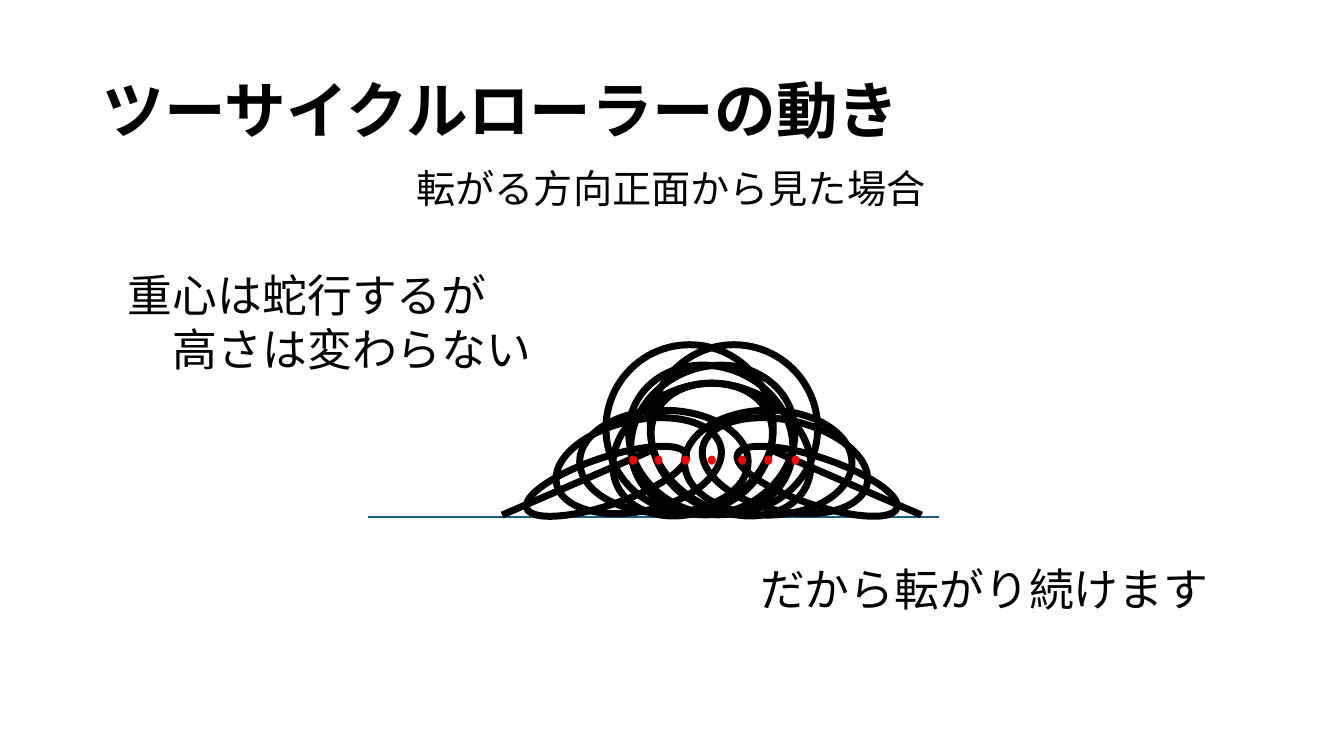
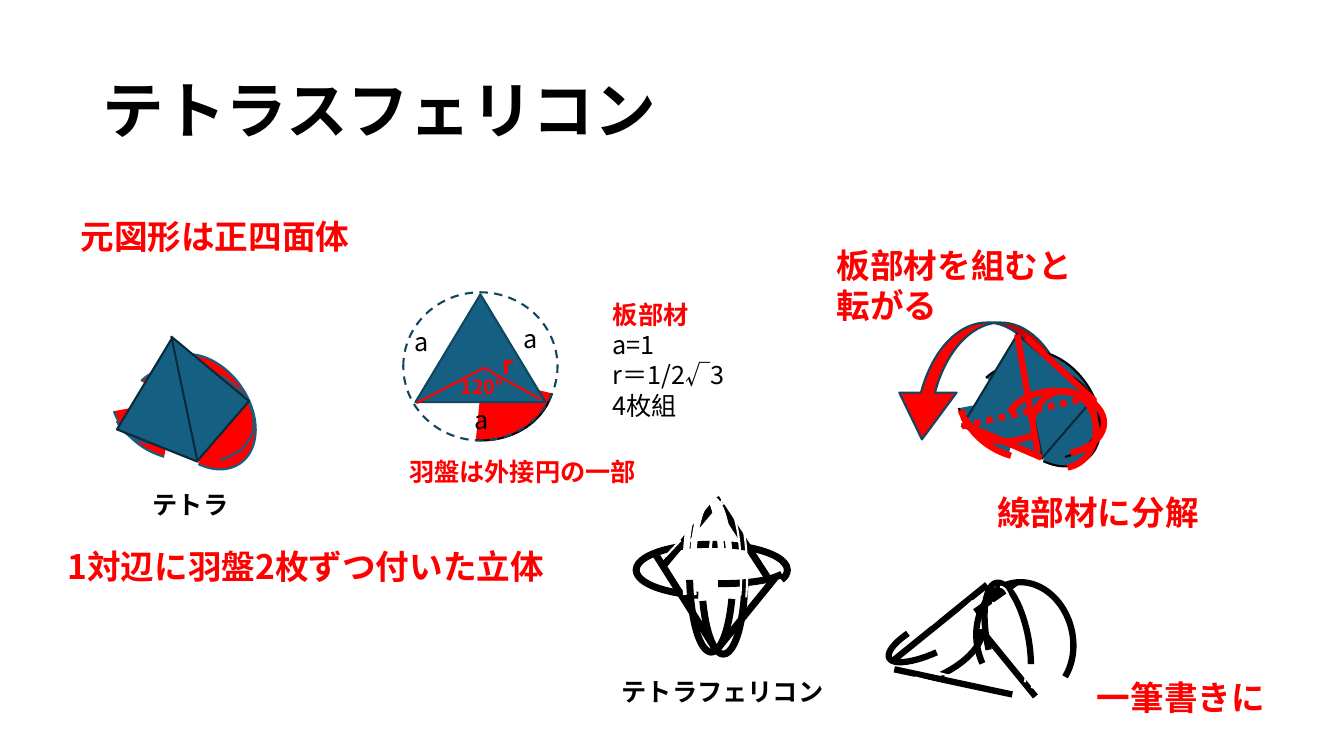
from lxml.etree import SubElement
from pptx import Presentation
from pptx.dml.color import RGBColor
from pptx.enum.dml import MSO_LINE
from pptx.enum.shapes import MSO_CONNECTOR, MSO_SHAPE
from pptx.enum.text import MSO_ANCHOR, PP_ALIGN
from pptx.oxml.ns import qn
from pptx.util import Cm, Pt

FONT = "Noto Sans CJK JP"
BLACK, WHITE, RED = "000000", "FFFFFF", "FF0000"
BLUE, NAVY, DARK = "156082", "104760", "092A39"

# Slide 1 content; positions are in inches: x, y, w, h, rotation
ROLL_TITLE = "ツーサイクルローラーの動き"
ROLL_TEXTS = [  # at, lines, size, centred
    ((1.17, 2.61, 4.95, 1.18), ["重心は蛇行するが", "高さは変わらない"], 32, False),
    ((7.44, 5.52, 4.95, 0.64), ["だから転がり続けます"], 32, False),
    ((4, 1.58, 5.31, 0.57), ["転がる方向正面から見た場合"], 28, True),
]
AXIS = 7.06
GROUND = (3.65, 5.13, 9.31, 5.13)
SPOKE = (4.98, 5.11, 6.48, 4.46)
RINGS = [  # each is drawn again mirrored about AXIS
    (6.01, 3.42, 1.66, 1.66, 0),
    (5.18, 4.54, 1.67, 0.47, -18.6),
    (6.22, 3.64, 1.66, 1.45, 23.3),
    (5.5, 4.17, 1.67, 0.9, -12.8),
    (6.42, 3.85, 1.66, 1.22, 26.1),
]
MIDDLE = [(6.79, 4.07, 1.66, 1.04), (5.75, 4.07, 1.67, 1.02)]
CENTRES = [6.24, 6.49, 6.76, 7.02, 7.32, 7.58, 7.85]

# Slide 2 content
TETRA_TITLE = "テトラスフェリコン"
TETRA_TEXTS = [  # at, lines, size, colour, bold, centred
    ((0.57, 4.81, 2.64, 0.4), ["テトラ"], 18, BLACK, True, True),
    ((5.57, 6.66, 3.19, 0.4), ["テトラフェリコン"], 18, BLACK, True, True),
    ((0.7, 2.09, 4.19, 0.5), ["元図形は正四面体"], 24, RED, True, False),
    ((4.01, 3.19, 0.67, 0.4), ["a"], 18, BLACK, False, False),
    ((4.61, 3.96, 0.67, 0.4), ["a"], 18, BLACK, False, False),
    ((5.09, 3.16, 0.67, 0.4), ["a"], 18, BLACK, False, False),
    ((4.89, 3.42, 1.1, 0.4), ["r"], 18, RED, True, False),
    ((4.47, 3.67, 1.1, 0.34), ["120°"], 14, RED, True, False),
    ((0.57, 5.37, 5.19, 0.5), ["1対辺に羽盤2枚ずつ付いた立体"], 24, RED, True, False),
    ((8.2, 2.38, 3.11, 0.91), ["板部材を組むと", "転がる"], 24, RED, True, False),
    ((9.79, 4.83, 2.51, 0.5), ["線部材に分解"], 24, RED, True, False),
    ((3.96, 4.48, 2.64, 0.4), ["羽盤は外接円の一部"], 18, RED, True, False),
    ((10.78, 6.67, 2.18, 0.5), ["一筆書きに"], 24, RED, True, False),
]
PARTS_AT = (5.98, 2.92, 1.83, 1.31)
PARTS = ["板部材", "a=1", "r＝1/2√3", "4枚組"]

# Arcs: x, y, w, h, start, end [, rotation [, flipped]]; lines: x1, y1, x2, y2
SECTOR = (4.06, 3.11, 1.44, 1.26, 13.19, 95.45)
WINGS = [
    (1.4, 3.64, 1.25, 0.89, 177.63, 41.28, 54.9),
    (1.28, 3.65, 1.25, 0.92, 196.72, 41.99, 16.5),
    (1.08, 3.39, 1.34, 1.15, 75.69, 143.05, 26.5),
    (1.08, 3.42, 1.25, 0.92, 106.93, 185.89, 325.6),
]
BODY = [(1.96, 4.57), (2.47, 3.98), (1.7, 3.34), (1.96, 4.58), (1.16, 4.26), (1.71, 3.35)]
SHIFT = (8.38, -0.03)
RADII = [(4.13, 4), (4.8, 3.65), (5.36, 3.96)]
HIDDEN = (9.54, 4.23, 10.78, 3.95)
LAYERS = [  # colour, width, strokes from back to front
    (RED, 4.5, [  # wires of the rolling solid
        (9.99, 3.88, 0.96, 0.63, 192.6, 63.57),
        (10.23, 3.88, 0.64, 0.76, 192.6, 84.24),
        (10.29, 4.48, 10.09, 3.32),
        (9.48, 3.38, 1.34, 1.15, 75.69, 143.05, 26.5),
        (9.61, 4.23, 10.33, 4.54),
        (9.5, 3.4, 1.25, 0.92, 106.93, 185.89, 325.6),
        (10.18, 3.35, 10.86, 3.98)]),
    (BLACK, 5, [  # wire model
        (7.1, 4.94, 7.66, 5.8),
        (6.56, 5.49, 1.24, 0.3, 5.62, 110.81),
        (6.59, 5.6, 7.1, 4.99),
        (6.49, 5.48, 7.09, 6.43),
        (6.96, 4.94, 0.43, 1.55, 50.43, 164.9, 0, True),
        (6.31, 5.4, 1.5, 0.51, 118.02, 8.12),
        (7.69, 5.73, 7.13, 6.42)]),
    (WHITE, 1.5, [  # gaps at its crossings
        (7.03, 4.99, 0.32, 1.44, 162, 51.92),
        (7.04, 4.92, 0.37, 1.56, 162, 51.92),
        (6.75, 5.36, 6.6, 5.52),
        (6.92, 5.52, 6.77, 5.69)]),
    (WHITE, 4.5, [
        (6.87, 4.95, 0.37, 1.46, 162, 51.92, 0, True),
        (6.8, 4.89, 0.36, 1.58, 162, 51.92, 0, True)]),
    (BLACK, 5, [(6.84, 4.92, 0.43, 1.55, 50.43, 164.9)]),
    (BLACK, 4.5, [  # single-stroke model
        (9.69, 5.77, 0.95, 1.16, 165.05, 56.29, 346.1),
        (9.79, 5.77, 0.41, 1.16, 164, 57.22, 348.9),
        (8.77, 6.16, 0.98, 0.31, 104.89, 212.77, 334.2),
        (8.82, 6.23, 0.97, 0.45, 3.36, 112.37, 330.4),
        (10.08, 5.78, 9.67, 6.07),
        (8.87, 6.64, 10.04, 6.89),
        (10.27, 6.91, 9.74, 6.26),
        (8.85, 6.56, 9.79, 5.8)]),
    (WHITE, 1.5, [  # gaps at its crossings
        (9.65, 5.96, 9.38, 6.2),
        (9.51, 5.96, 9.23, 6.2),
        (9.38, 6.8, 9.07, 6.72),
        (9.44, 6.71, 9.13, 6.63),
        (9.82, 5.82, 0.2, 0.41, 270, 0),
        (9.85, 5.77, 0.24, 0.42, 165.3, 183.88),
        (10.05, 6.51, 0.2, 0.41, 12.77, 53.59),
        (9.98, 6.45, 0.2, 0.41, 12.77, 53.59)]),
]


def cm(*inches):
    return [Cm(v * 2.54) for v in inches]


def rgb(code):
    return RGBColor.from_string(code)


def paint(shape, fill=None, line=None, width=1.5):
    shape.shadow.inherit = False
    if fill:
        shape.fill.solid()
        shape.fill.fore_color.rgb = rgb(fill)
    else:
        shape.fill.background()
    if line:
        shape.line.color.rgb = rgb(line)
        shape.line.width = Pt(width)
    else:
        shape.line.fill.background()


def form(slide, kind, at, fill=None, line=None, width=1.5, turn=0, flip=False):
    shape = slide.shapes.add_shape(kind, *cm(*at))
    paint(shape, fill, line, width)
    shape.rotation = turn % 360
    if flip:
        shape._element.spPr.find(qn("a:xfrm")).set("flipH", "1")
    return shape


def arc(slide, item, line, width=1.5, fill=None):
    x, y, w, h, start, end, *rest = item
    shape = form(slide, MSO_SHAPE.ARC, (x, y, w, h), fill, line, width, *rest)
    for i, angle in enumerate((start, end)):
        shape.adjustments[i] = angle * 0.6  # 60000 units to a degree


def rule(slide, ends, color, width):
    line = slide.shapes.add_connector(MSO_CONNECTOR.STRAIGHT, *cm(*ends))
    line.line.color.rgb = rgb(color)
    line.line.width = Pt(width)
    SubElement(line._element.spPr, qn("a:effectLst"))
    return line


def trace(slide, points, fill, line):
    first, *rest = [cm(*point) for point in points]
    pen = slide.shapes.build_freeform(*first)
    pen.add_line_segments(rest, close=False)
    paint(pen.convert_to_shape(), fill, line)


def write(slide, at, lines, size, color=BLACK, bold=False, center=False):
    frame = slide.shapes.add_textbox(*cm(*at)).text_frame
    frame.word_wrap = True
    frame.text = "\n".join(lines)
    for par in frame.paragraphs:
        font = par.font
        font.size, font.bold, font.name = Pt(size), bold, FONT
        font.color.rgb = rgb(color)
        SubElement(font._rPr, qn("a:ea"), typeface=FONT)
        if center:
            par.alignment = PP_ALIGN.CENTER
    return frame


def page(deck, title):
    slide = deck.slides.add_slide(deck.slide_layouts[6])
    frame = write(slide, (0.92, 0.4, 11.5, 1.45), [title], 44, bold=True)
    frame.vertical_anchor = MSO_ANCHOR.MIDDLE
    frame.paragraphs[0].line_spacing = 0.9
    return slide


def tetra(slide, dx, dy, fill, line):
    for x, y, *rest in WINGS:
        arc(slide, (x + dx, y + dy, *rest), line, fill=fill)
    trace(slide, [(x + dx, y + dy) for x, y in BODY], BLUE, DARK)


def roll(deck):
    slide = page(deck, ROLL_TITLE)
    rule(slide, GROUND, BLUE, 1.5)
    # Rolling rings and their mirror images
    x1, y1, x2, y2 = SPOKE
    for ends in (SPOKE, (2 * AXIS - x1, y1, 2 * AXIS - x2, y2)):
        rule(slide, ends, BLACK, 5)
    for x, y, w, h, turn in RINGS:
        for left, tilt in ((x, turn), (2 * AXIS - x - w, -turn)):
            form(slide, MSO_SHAPE.OVAL, (left, y, w, h), None, BLACK, 5, tilt)
    for at in MIDDLE:
        form(slide, MSO_SHAPE.OVAL, at, None, BLACK, 5)
    # Centres of gravity
    for x in CENTRES:
        form(slide, MSO_SHAPE.OVAL, (x, 4.52, 0.08, 0.09), RED)
    frames = [write(slide, at, lines, size, center=mid)
              for at, lines, size, mid in ROLL_TEXTS]
    second = frames[0].paragraphs[1]
    second._p.get_or_add_pPr().set("marL", str(Cm(1.13)))


def solid(deck):
    slide = page(deck, TETRA_TITLE)
    # Rolling arrow
    arrow = form(slide, MSO_SHAPE.CURVED_DOWN_ARROW, (8.86, 3.2, 1.78, 1.16),
                 RED, NAVY, flip=True)
    for i, value in enumerate((0.12, 0.49, 0.4)):
        arrow.adjustments[i] = value
    # Plate part inside its circle
    arc(slide, SECTOR, BLACK, fill=RED)
    form(slide, MSO_SHAPE.ISOSCELES_TRIANGLE, (4.12, 2.92, 1.29, 1.07), BLUE, NAVY)
    trace(slide, RADII, None, RED)
    ring = form(slide, MSO_SHAPE.OVAL, (4, 2.9, 1.53, 1.47), None, NAVY)
    ring.line.dash_style = MSO_LINE.DASH
    # Solids, then wires
    tetra(slide, 0, 0, RED, BLUE)
    tetra(slide, *SHIFT, BLUE, BLACK)
    rule(slide, HIDDEN, RED, 4.5).line.dash_style = MSO_LINE.ROUND_DOT
    for color, width, strokes in LAYERS:
        for item in strokes:
            draw = rule if len(item) == 4 else arc
            draw(slide, item, color, width)
    # Labels
    for at, lines, *style in TETRA_TEXTS:
        write(slide, at, lines, *style)
    head = write(slide, PARTS_AT, PARTS, 18).paragraphs[0].font
    head.bold = True
    head.color.rgb = rgb(RED)


def main():
    deck = Presentation()
    deck.slide_width, deck.slide_height = cm(13.33, 7.5)
    roll(deck)
    solid(deck)
    deck.save("out.pptx")


if __name__ == "__main__":
    main()
